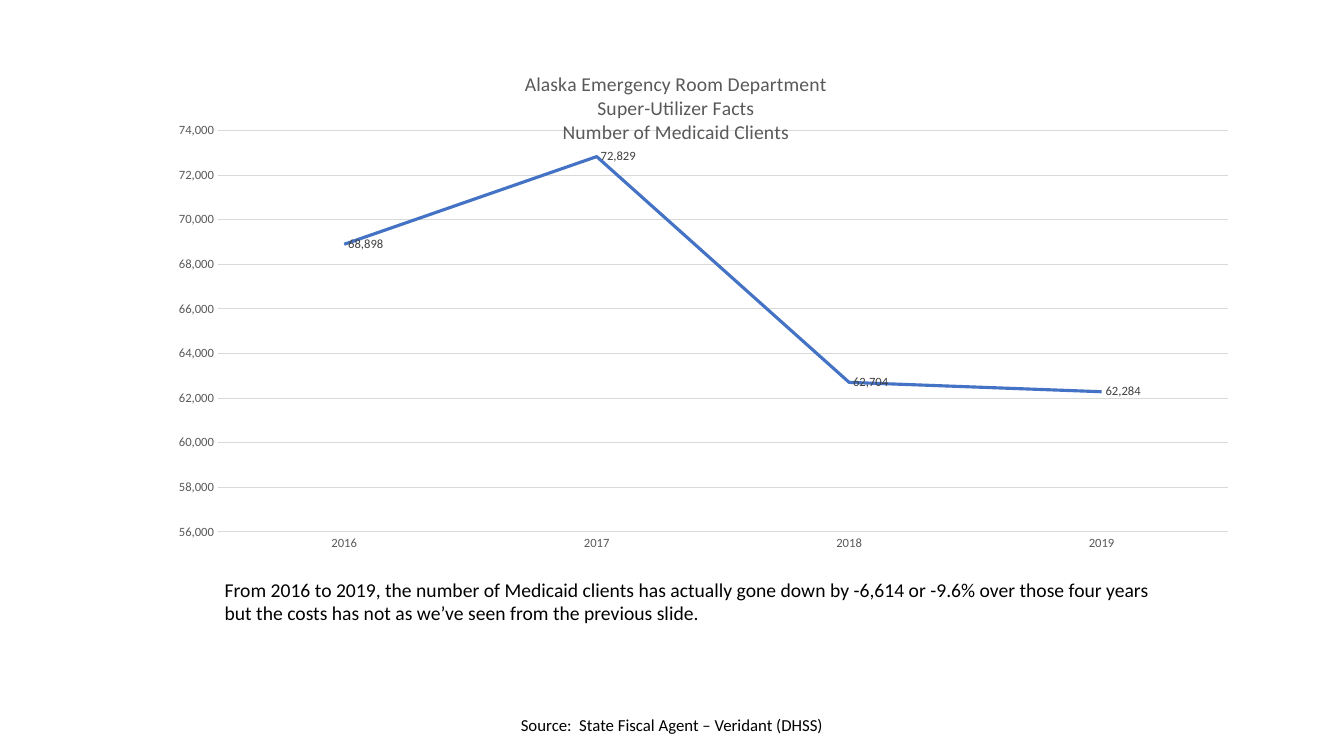
import pptx
import pptx.chart.data
import pptx.dml.color
import pptx.enum.chart
import pptx.enum.text
import pptx.oxml
import pptx.oxml.ns
import pptx.util
from dataclasses import dataclass

Inches = pptx.util.Inches
Pt = pptx.util.Pt
RGB = pptx.dml.color.RGBColor.from_string
ALIGN = pptx.enum.text.PP_ALIGN


@dataclass(frozen=True)
class Theme:
    font: str = "Calibri"
    text: str = "000000"
    muted: str = "595959"
    label: str = "404040"
    grid: str = "D9D9D9"
    series: str = "4472C4"
    title_size: float = 14
    body_size: float = 14
    source_size: float = 12
    tick_size: float = 9
    hairline: float = 0.75
    series_line: float = 2.25


class SlideBuilder:
    def __init__(self, prs, theme):
        self.theme = theme
        self.s = prs.slides.add_slide(prs.slide_layouts[6])

    def style_font(self, font, size, color):
        font.name = self.theme.font
        font.size = Pt(size)
        font.bold = False
        font.color.rgb = RGB(color)

    def style_line(self, line, width, color):
        line.width = Pt(width)
        line.color.rgb = RGB(color)

    def text(self, box, wording, size, align=ALIGN.LEFT):
        tf = self.s.shapes.add_textbox(*map(Inches, box)).text_frame
        tf.word_wrap = True
        p = tf.paragraphs[0]
        p.alignment = align
        r = p.add_run()
        r.text = wording
        self.style_font(r.font, size, self.theme.text)

    def place(self, parent, **settings):
        """Give a chart title or plot area a fixed place, in chart fractions."""
        for old in parent.findall(pptx.oxml.ns.qn("c:layout")):
            parent.remove(old)
        items = "".join(f'<c:{k} val="{v}"/>' for k, v in settings.items())
        layout = pptx.oxml.parse_xml(
            f'<c:layout {pptx.oxml.ns.nsdecls("c")}>'
            f"<c:manualLayout>{items}</c:manualLayout></c:layout>")
        text = parent.find(pptx.oxml.ns.qn("c:tx"))
        if text is None:
            parent.insert(0, layout)
        else:
            text.addnext(layout)

    def chart_title(self, chart, lines):
        tf = chart.chart_title.text_frame
        for i, wording in enumerate(lines):
            p = tf.add_paragraph() if i else tf.paragraphs[0]
            p.alignment = ALIGN.CENTER
            r = p.add_run()
            r.text = wording
            self.style_font(r.font, self.theme.title_size, self.theme.muted)

    def line_chart(self, box, title, name, values, scale):
        t = self.theme
        data = pptx.chart.data.CategoryChartData(number_format="#,##0")
        data.categories = list(values)
        data.add_series(name, list(values.values()))
        chart = self.s.shapes.add_chart(
            pptx.enum.chart.XL_CHART_TYPE.LINE, *map(Inches, box), data).chart
        chart.has_legend = False
        self.style_font(chart.font, 10, t.text)
        self.chart_title(chart, title)

        # Axes
        for axis in (chart.category_axis, chart.value_axis):
            axis.major_tick_mark = pptx.enum.chart.XL_TICK_MARK.NONE
            axis.minor_tick_mark = pptx.enum.chart.XL_TICK_MARK.NONE
            self.style_font(axis.tick_labels.font, t.tick_size, t.muted)
        self.style_line(chart.category_axis.format.line, t.hairline, t.grid)
        axis = chart.value_axis
        axis.minimum_scale, axis.maximum_scale, axis.major_unit = scale
        axis.format.line.fill.background()
        self.style_line(axis.major_gridlines.format.line, t.hairline, t.grid)
        axis.tick_labels.number_format = "#,##0"
        axis.tick_labels.number_format_is_linked = False

        # Series and its labels
        plot = chart.plots[0]
        plot.vary_by_categories = False
        series = plot.series[0]
        series.smooth = False
        series.marker.style = pptx.enum.chart.XL_MARKER_STYLE.NONE
        self.style_line(series.format.line, t.series_line, t.series)
        labels = series.data_labels
        labels.show_value = True
        labels.position = pptx.enum.chart.XL_LABEL_POSITION.RIGHT
        self.style_font(labels.font, t.tick_size, t.label)
        return chart


def main():
    prs = pptx.Presentation()
    prs.slide_width = Inches(13.33)
    prs.slide_height = Inches(7.5)
    theme = Theme()
    slide = SlideBuilder(prs, theme)

    # Client chart
    chart = slide.line_chart(
        (0.92, 0.46, 11.5, 5.22),
        ["Alaska Emergency Room Department", "Super-Utilizer Facts",
         "Number of Medicaid Clients"],
        "Medicaid Clients",
        {"2016": 68898, "2017": 72829, "2018": 62704, "2019": 62284},
        (56000, 74000, 2000))
    slide.place(chart.chart_title._element, xMode="edge", yMode="edge",
                x=0.37, y=0.04)
    slide.place(chart._chartSpace.chart.plotArea, layoutTarget="inner",
                xMode="edge", yMode="edge", x=0.108, y=0.16, w=0.871, h=0.763)

    # Source line
    slide.text((4.46, 7.04, 4.41, 0.46),
               "Source:  State Fiscal Agent – Veridant (DHSS)",
               theme.source_size, ALIGN.CENTER)

    # Takeaway
    slide.text((2.13, 5.68, 9.6, 0.57),
               "From 2016 to 2019, the number of Medicaid clients has actually "
               "gone down by -6,614 or -9.6% over those four years but the "
               "costs has not as we’ve seen from the previous slide.",
               theme.body_size)

    prs.save("out.pptx")


if __name__ == "__main__":
    main()
